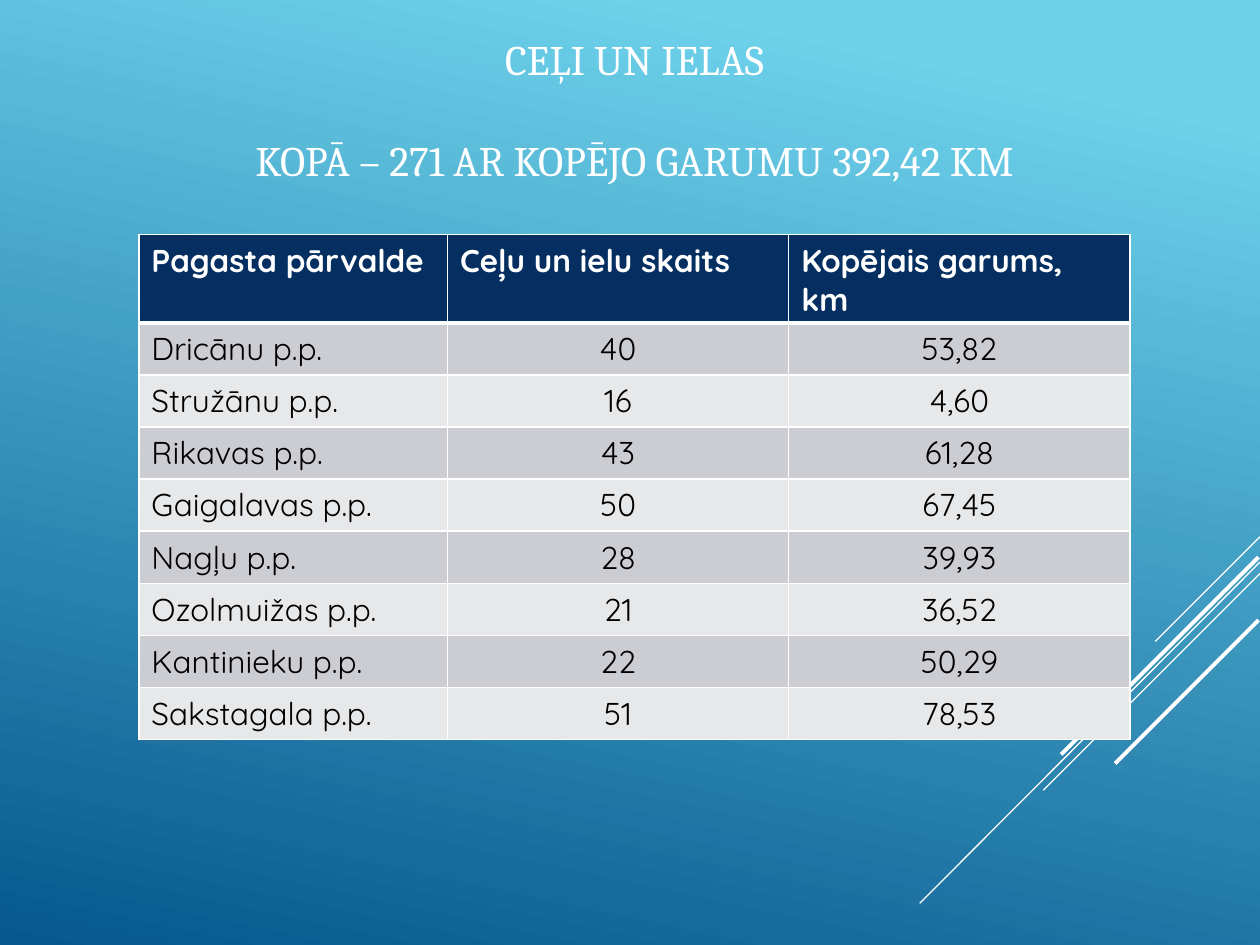
from typing import NamedTuple

from lxml import etree
from pptx import Presentation
from pptx.dml.color import RGBColor
from pptx.enum.shapes import MSO_CONNECTOR
from pptx.enum.text import MSO_ANCHOR, PP_ALIGN
from pptx.oxml.ns import qn
from pptx.util import Cm, Pt

STRAIGHT = MSO_CONNECTOR.STRAIGHT
MIDDLE = MSO_ANCHOR.MIDDLE
LEFT, CENTER = PP_ALIGN.LEFT, PP_ALIGN.CENTER

WHITE = RGBColor(0xFF, 0xFF, 0xFF)
BLACK = RGBColor(0x00, 0x00, 0x00)
SKY = RGBColor(0x6E, 0xD2, 0xEB)
OCEAN = RGBColor(0x06, 0x58, 0x8E)
NAVY = RGBColor(0x05, 0x2F, 0x61)
BANDS = (RGBColor(0xCC, 0xCD, 0xD2), RGBColor(0xE7, 0xE8, 0xEA))

TITLE_FONT, TABLE_FONT = "Cambria", "Quicksand"


class Stripe(NamedTuple):
    """A diagonal line, in centimetres, with its width in points."""
    x1: float
    y1: float
    x2: float
    y2: float
    width: float


class Parish(NamedTuple):
    name: str
    roads: str
    length: str


STRIPES = (
    Stripe(25.4, 10.82, 23.29, 12.93, 0.75),
    Stripe(25.4, 11.33, 18.54, 18.21, 0.75),
    Stripe(25.4, 11.56, 21.03, 15.93, 0.75),
    Stripe(25.37, 11.23, 21.39, 15.21, 2.25),
    Stripe(25.37, 12.5, 22.48, 15.39, 2.25),
)

TITLE_LINES = ("CEĻI UN IELAS", "KOPĀ – 271 AR KOPĒJO GARUMU 392,42 KM")

HEADINGS = Parish("Pagasta pārvalde", "Ceļu un ielu skaits", "Kopējais garums, km")
PARISHES = (
    Parish("Dricānu p.p.", "40", "53,82"),
    Parish("Stružānu p.p.", "16", "4,60"),
    Parish("Rikavas p.p.", "43", "61,28"),
    Parish("Gaigalavas p.p.", "50", "67,45"),
    Parish("Nagļu p.p.", "28", "39,93"),
    Parish("Ozolmuižas p.p.", "21", "36,52"),
    Parish("Kantinieku p.p.", "22", "50,29"),
    Parish("Sakstagala p.p.", "51", "78,53"),
)
COLUMN_WIDTHS = (Cm(6.22), Cm(6.88), Cm(6.88))
ROW_HEIGHT = Cm(1.05)


def paint_background(slide) -> None:
    fill = slide.background.fill
    fill.gradient()
    fill.gradient_angle = 258
    for stop, position, color in zip(fill.gradient_stops, (0.1, 1), (SKY, OCEAN)):
        stop.position = position
        stop.color.rgb = color


def draw_stripe(slide, stripe: Stripe) -> None:
    line = slide.shapes.add_connector(
        STRAIGHT, Cm(stripe.x1), Cm(stripe.y1), Cm(stripe.x2), Cm(stripe.y2))
    line.line.color.rgb = WHITE
    line.line.width = Pt(stripe.width)
    etree.SubElement(line._element.spPr, qn("a:effectLst"))


def draw_title(slide) -> None:
    title = slide.shapes.add_textbox(Cm(0.89), Cm(0.53), Cm(23.8), Cm(3.33)).text_frame
    title.word_wrap = True
    title.vertical_anchor = MIDDLE
    title.text = "\n".join(TITLE_LINES)
    for paragraph in title.paragraphs:
        paragraph.alignment = CENTER
        paragraph.font.name = TITLE_FONT
        paragraph.font.size = Pt(24)
        paragraph.font.color.rgb = WHITE
    title.paragraphs[-1].space_before = Pt(29)


def set_borders(cell, top: float, bottom: float) -> None:
    properties = cell._tc.get_or_add_tcPr()
    for side, width in (("L", 1), ("R", 1), ("T", top), ("B", bottom)):
        border = etree.SubElement(properties, qn(f"a:ln{side}"), w=str(Pt(width)))
        solid = etree.SubElement(border, qn("a:solidFill"))
        etree.SubElement(solid, qn("a:srgbClr"), val=str(WHITE))


def fill_row(table, row: int, parish: Parish) -> None:
    is_header = row == 0
    for column, text in enumerate(parish):
        cell = table.cell(row, column)
        # The rule under the header is thicker than the others
        set_borders(cell, 3 if row == 1 else 1, 3 if is_header else 1)
        cell.fill.solid()
        cell.fill.fore_color.rgb = NAVY if is_header else BANDS[(row - 1) % 2]
        cell.text = text
        paragraph = cell.text_frame.paragraphs[0]
        paragraph.alignment = LEFT if is_header or column == 0 else CENTER
        paragraph.font.name = TABLE_FONT
        paragraph.font.size = Pt(18)
        paragraph.font.bold = is_header
        paragraph.font.color.rgb = WHITE if is_header else BLACK


def draw_road_table(slide) -> None:
    rows = (HEADINGS, *PARISHES)
    table = slide.shapes.add_table(
        len(rows), len(COLUMN_WIDTHS), Cm(2.8), Cm(4.73),
        sum(COLUMN_WIDTHS), ROW_HEIGHT * len(rows)).table
    for column, width in zip(table.columns, COLUMN_WIDTHS):
        column.width = width
    for row, parish in enumerate(rows):
        fill_row(table, row, parish)


def main() -> None:
    deck = Presentation()
    deck.slide_width, deck.slide_height = Cm(25.4), Cm(19.05)
    slide = deck.slides.add_slide(deck.slide_layouts[6])

    # Backdrop
    paint_background(slide)
    for stripe in STRIPES:
        draw_stripe(slide, stripe)

    # Content
    draw_title(slide)
    draw_road_table(slide)

    deck.save("out.pptx")


if __name__ == "__main__":
    main()
